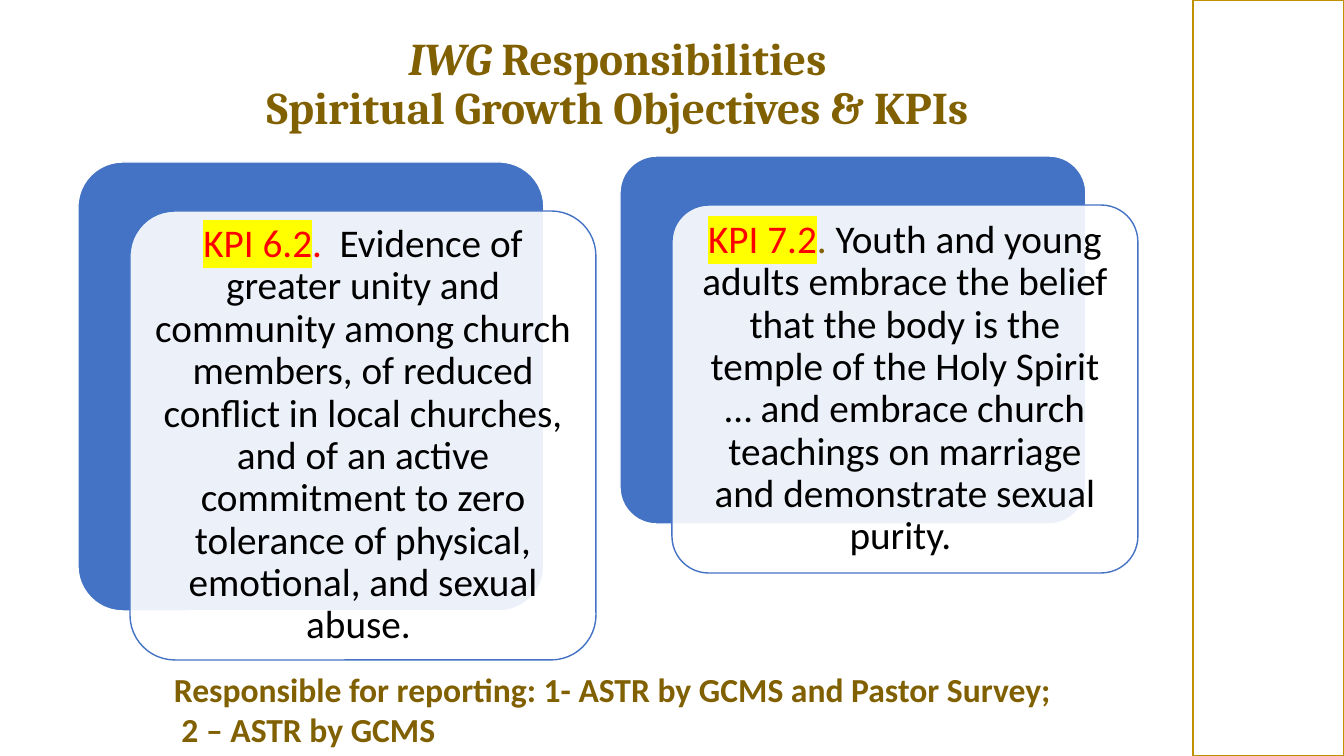
from lxml.etree import SubElement
from pptx import Presentation
from pptx.dml.color import RGBColor
from pptx.enum.shapes import MSO_SHAPE as Preset
from pptx.enum.text import MSO_ANCHOR as Anchor, PP_ALIGN as Align
from pptx.oxml.ns import qn
from pptx.util import Emu, Pt

PX = 12192000 / 1344
GOLD, RED, BLUE, BLACK, WHITE, YELLOW = "806000", "FF0000", "4472C4", "000000", "FFFFFF", "FFFF00"
CARDS = [
    ((78, 162, 518, 498), "KPI 6.2", (".  ", RED),
     "Evidence of greater unity and community among church members, of reduced conflict "
     "in local churches, and of an active commitment to zero tolerance of physical, "
     "emotional, and sexual abuse. "),
    ((620, 156, 518, 417), "KPI 7.2", (". ", GOLD),
     "Youth and young adults embrace the belief that the body is the temple of the Holy "
     "Spirit … and embrace church teachings on marriage and demonstrate sexual purity. "),
]


def px(*lengths):
    """Turn pixel lengths into EMU."""
    return [Emu(round(length * PX)) for length in lengths]


def color(value):
    """Turn a hex string into a colour."""
    return RGBColor.from_string(value)


def add_run(paragraph, text, size, hue, font="Calibri", bold=False, italic=False, highlight=None):
    """Add one styled run to a paragraph."""
    run = paragraph.add_run()
    run.text = text
    style = run.font
    style.size, style.name, style.bold, style.italic = Pt(size), font, bold, italic
    style.color.rgb = color(hue)
    if highlight:
        properties = style._element
        marker = SubElement(properties, qn("a:highlight"))
        SubElement(marker, qn("a:srgbClr"), val=highlight)
        properties.find(qn("a:solidFill")).addnext(marker)


def add_panel(slide, preset, box, line, fill=None, alpha=None):
    """Draw an outlined panel with an optional translucent fill."""
    panel = slide.shapes.add_shape(preset, *px(*box))
    panel.shadow.inherit = False
    panel.line.color.rgb = color(line)
    panel.line.width = Pt(1)
    if fill:
        panel.fill.solid()
        panel.fill.fore_color.rgb = color(fill)
    else:
        panel.fill.background()
    if alpha:
        tint = panel.fill._xPr.find(qn("a:solidFill")).find(qn("a:srgbClr"))
        SubElement(tint, qn("a:alpha"), val=str(alpha * 1000))
    return panel


def add_title(slide, box):
    """Write the two-line heading centred in its box."""
    frame = slide.shapes.add_textbox(*px(*box)).text_frame
    frame.word_wrap = True
    frame.vertical_anchor = Anchor.MIDDLE
    heading = frame.paragraphs[0]
    heading.alignment = Align.CENTER
    heading.line_spacing = 0.9
    add_run(heading, "IWG ", 32.4, GOLD, "Cambria", bold=True, italic=True)
    add_run(heading, "Responsibilities", 32.4, GOLD, "Cambria", bold=True)
    heading.add_line_break()
    add_run(heading, "Spiritual Growth Objectives & KPIs", 32.4, GOLD, "Cambria", bold=True)


def add_card(slide, box, label, separator, statement):
    """Draw a KPI card: a blue back panel and an offset front panel with text."""
    left, top, width, height = box
    shift_x, shift_y = 52, 49
    size = (width - shift_x, height - shift_y)
    back = add_panel(slide, Preset.ROUNDED_RECTANGLE, (left, top, *size), WHITE, BLUE)
    front = add_panel(slide, Preset.ROUNDED_RECTANGLE,
                      (left + shift_x, top + shift_y, *size), BLUE, WHITE, alpha=90)
    for panel in (back, front):
        panel.adjustments[0] = 0.1
    frame = front.text_frame
    frame.word_wrap = True
    frame.vertical_anchor = Anchor.MIDDLE
    frame.margin_left, frame.margin_top, frame.margin_right, frame.margin_bottom = px(12, 12, 12, 12)
    kpi = frame.paragraphs[0]
    kpi.alignment = Align.CENTER
    kpi.line_spacing = 0.9
    add_run(kpi, label, 28, RED, highlight=YELLOW)
    add_run(kpi, *separator[:1], 28, separator[1])
    add_run(kpi, statement, 28, BLACK)


def add_reporting(slide, box):
    """Write who is responsible for reporting."""
    frame = slide.shapes.add_textbox(*px(*box)).text_frame
    frame.word_wrap = False
    add_run(frame.paragraphs[0], "Responsible for reporting: 1- ASTR by GCMS and Pastor Survey;",
            24, GOLD, bold=True)
    add_run(frame.add_paragraph(), " 2 – ASTR by GCMS", 24, GOLD, bold=True)


def main():
    """Build the slide and save it."""
    deck = Presentation()
    deck.slide_width, deck.slide_height = px(1344, 756)
    slide = deck.slides.add_slide(deck.slide_layouts[6])
    add_title(slide, (42, 25, 1151, 120))
    add_panel(slide, Preset.RECTANGLE, (1193, 0, 151, 756), "BF9000")
    for card in CARDS:
        add_card(slide, *card)
    add_reporting(slide, (164, 664, 906, 92))
    deck.save("out.pptx")


if __name__ == "__main__":
    main()
